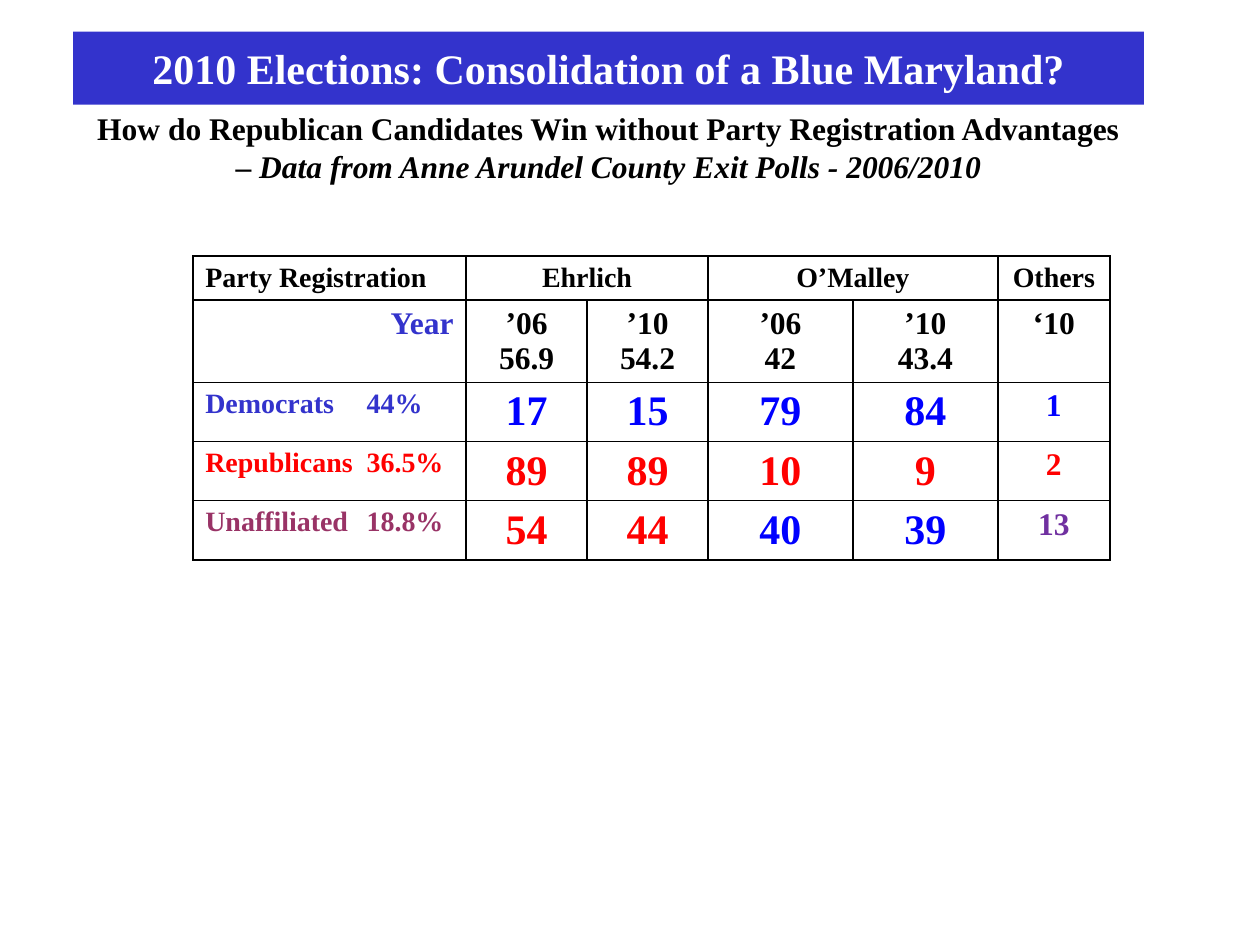
from pptx import Presentation
from pptx import util as u
from pptx.dml.color import RGBColor
from pptx.enum import shapes, text
from pptx.oxml.ns import qn
from lxml import etree

NAVY, BLUE, RED = "3333CC", "0000FF", "FF0000"
PLUM, VIOLET, BLACK, WHITE = "993366", "7030A0", "000000", "FFFFFF"
LEFT, CENTER, RIGHT = (text.PP_ALIGN.LEFT, text.PP_ALIGN.CENTER,
                       text.PP_ALIGN.RIGHT)
COLUMNS = [2.17, 0.96, 0.96, 1.15, 1.15, 0.89]
HEIGHTS = [0.35, 0.65, 0.47, 0.47, 0.47]
HEADINGS = [(0, "Party Registration"), (1, "Ehrlich"), (3, "O’Malley"),
            (5, "Others")]
YEARS = ["’06\n56.9", "’10\v54.2", "’06\n42", "’10\n43.4", "‘10"]
PARTIES = [
    ("Democrats\t44%", NAVY, [17, 15, 79, 84, 1], [BLUE] * 5),
    ("Republicans\t36.5%", RED, [89, 89, 10, 9, 2], [RED] * 5),
    ("Unaffiliated\t18.8%", PLUM, [54, 44, 40, 39, 13],
     [RED, RED, BLUE, BLUE, VIOLET]),
]
VALUE_SIZES = [24, 24, 24, 24, 18]


def rgb(value):
    return RGBColor.from_string(value)


class SlideBuilder:
    font = "Times New Roman"

    def __init__(self, prs):
        self.s = prs.slides.add_slide(prs.slide_layouts[5])

    def style(self, r, size, color, italic=False):
        values = {"name": self.font, "size": u.Pt(size), "bold": True,
                  "italic": italic}
        for name, value in values.items():
            setattr(r.font, name, value)
        r.font.color.rgb = rgb(color)

    def frame(self, tf):
        values = {"word_wrap": True, "auto_size": text.MSO_AUTO_SIZE.NONE,
                  "vertical_anchor": text.MSO_ANCHOR.MIDDLE}
        for name, value in values.items():
            setattr(tf, name, value)
        return tf

    def place(self, sp, *box):
        for name, value in zip(("left", "top", "width", "height"), box):
            setattr(sp, name, u.Inches(value))

    def title(self, box, runs, size, color):
        sp = self.s.shapes.title
        self.place(sp, *box)
        p = self.frame(sp.text_frame).paragraphs[0]
        p.alignment = CENTER
        for wording, italic in runs:
            r = p.add_run()
            r.text = wording
            self.style(r, size, color, italic)

    def banner(self, box, wording, size, color, fill):
        sp = self.s.shapes.add_shape(shapes.MSO_SHAPE.RECTANGLE,
                                     *map(u.Inches, box))
        sp.shadow.inherit = False
        sp.fill.solid()
        sp.fill.fore_color.rgb = rgb(fill)
        sp.line.fill.background()
        p = self.frame(sp.text_frame).paragraphs[0]
        p.text = wording
        p.alignment = CENTER
        self.style(p.runs[0], size, color)

    def table(self, left, top, widths, heights):
        sp = self.s.shapes.add_table(
            len(heights), len(widths),
            *map(u.Inches, (left, top, sum(widths), sum(heights))))
        table = sp.table
        table.first_row = table.horz_banding = False
        for column, width in zip(table.columns, widths):
            column.width = u.Inches(width)
        for row, height in zip(table.rows, heights):
            row.height = u.Inches(height)
        for cell in table.iter_cells():
            self.border(cell)
            cell.fill.background()
        return table

    def border(self, cell):
        tcPr = cell._tc.get_or_add_tcPr()
        for side in ("a:lnL", "a:lnR", "a:lnT", "a:lnB"):
            ln = etree.SubElement(tcPr, qn(side), w=str(u.Pt(1)))
            fill = etree.SubElement(ln, qn("a:solidFill"))
            etree.SubElement(fill, qn("a:srgbClr"), val=BLACK)

    def cell(self, cell, wording, size, color, align=CENTER):
        cell.text = wording
        for p in cell.text_frame.paragraphs:
            p.alignment = align
            for r in p.runs:
                self.style(r, size, color)

    def tab(self, cell, position):
        pPr = cell.text_frame.paragraphs[0]._p.get_or_add_pPr()
        stops = etree.SubElement(pPr, qn("a:tabLst"))
        etree.SubElement(stops, qn("a:tab"), pos=str(u.Inches(position)),
                         algn="l")


def main():
    prs = Presentation()
    prs.slide_width, prs.slide_height = u.Inches(10), u.Inches(7.5)
    b = SlideBuilder(prs)
    b.title((0.58, 0.75, 8.5, 0.83), [
        ("How do Republican Candidates Win without Party Registration "
         "Advantages – ", False),
        ("Data from Anne Arundel County Exit Polls - 2006/2010", True),
    ], 18, BLACK)

    table = b.table(1.53, 2.03, COLUMNS, HEIGHTS)
    for first in (1, 3):
        table.cell(0, first).merge(table.cell(0, first + 1))
    for col, heading in HEADINGS:
        b.cell(table.cell(0, col), heading, 16, BLACK, CENTER if col else LEFT)
    b.cell(table.cell(1, 0), "Year", 18, NAVY, RIGHT)
    for col, year in enumerate(YEARS, 1):
        b.cell(table.cell(1, col), year, 18, BLACK)
    for row, (party, color, values, colors) in enumerate(PARTIES, 2):
        b.cell(table.cell(row, 0), party, 16, color, LEFT)
        b.tab(table.cell(row, 0), 1.28)
        for col, (value, size, shade) in enumerate(
                zip(values, VALUE_SIZES, colors), 1):
            b.cell(table.cell(row, col), str(value), size, shade)

    b.banner((0.58, 0.25, 8.5, 0.58),
             "2010 Elections: Consolidation of a Blue Maryland?",
             24, WHITE, NAVY)
    prs.save("out.pptx")


if __name__ == "__main__":
    main()
